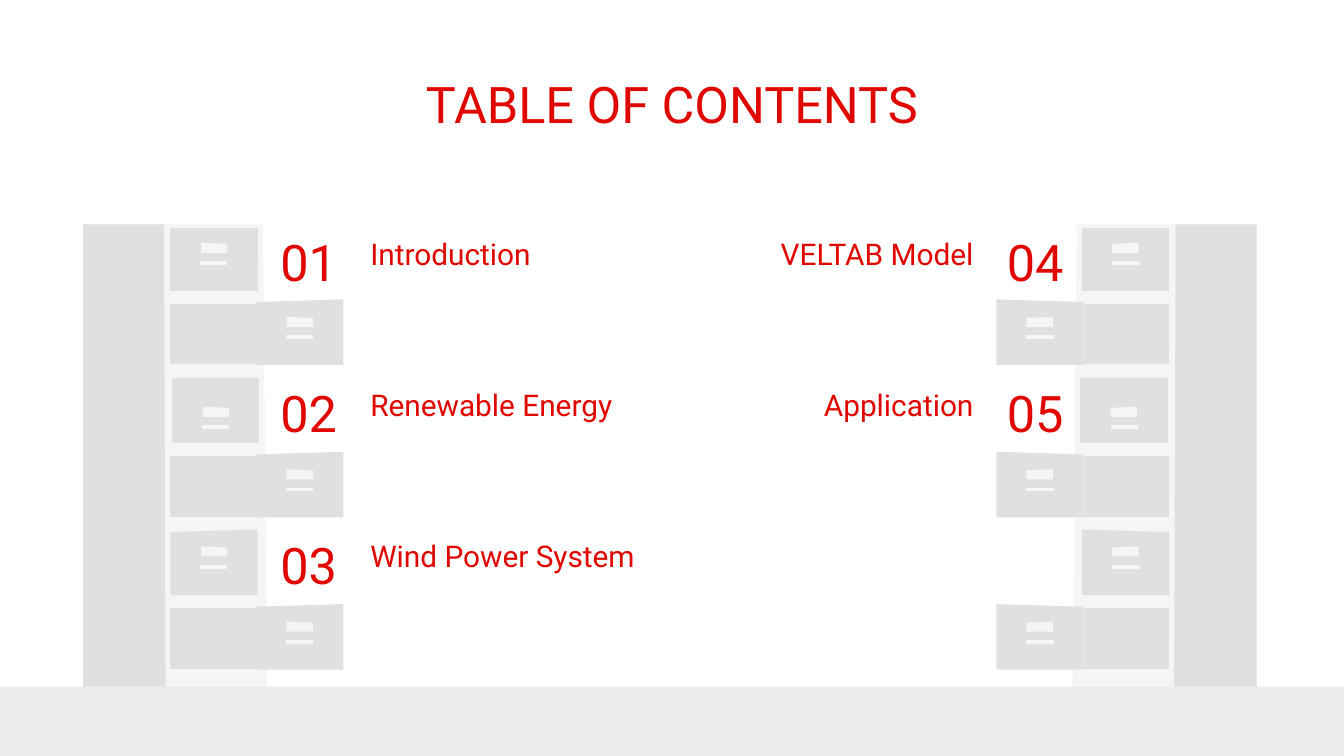
import pptx
import pptx.dml.color
import pptx.enum.shapes
import pptx.enum.text
import pptx.util

Cm = pptx.util.Cm
ALIGN = pptx.enum.text.PP_ALIGN
ANCHOR = pptx.enum.text.MSO_ANCHOR

RED = pptx.dml.color.RGBColor(0xE0, 0x07, 0x00)
PALE = pptx.dml.color.RGBColor(0xF5, 0xF5, 0xF5)
GREY = pptx.dml.color.RGBColor(0xE0, 0xE0, 0xE0)
FLOOR = pptx.dml.color.RGBColor(0xEB, 0xEB, 0xEB)
FONT = "Roboto"

WIDTH, HEIGHT = 25.4, 14.29
GROUND = 12.98
PITCH = 2.88
CASE_W, CASE_H = 4.93, 8.74
FRONT_W = 1.65
NUM_W, TOPIC_W = 1.83, 5.69


def paint(shape, color):
    shape.shadow.inherit = False
    shape.fill.solid()
    shape.fill.fore_color.rgb = color
    shape.line.fill.background()


def write(shape, text, size, align, anchor):
    frame = shape.text_frame
    frame.word_wrap = True
    frame.auto_size = pptx.enum.text.MSO_AUTO_SIZE.NONE
    frame.vertical_anchor = anchor
    frame.margin_left = frame.margin_right = Cm(0.25)
    frame.margin_top = frame.margin_bottom = Cm(0.25)
    frame.text = text
    line = frame.paragraphs[0]
    line.alignment = align
    line.font.size = pptx.util.Pt(size)
    line.font.name = FONT
    line.font.color.rgb = RED


def add_title(slide, left, top, width, height):
    title = slide.shapes.title
    title.left, title.top = Cm(left), Cm(top)
    title.width, title.height = Cm(width), Cm(height)
    write(title, "TABLE OF CONTENTS", 27, ALIGN.CENTER, ANCHOR.MIDDLE)


def add_floor(slide, left, top, width, height):
    kind = pptx.enum.shapes.MSO_SHAPE.RECTANGLE
    floor = slide.shapes.add_shape(
        kind, Cm(left), Cm(top), Cm(width), Cm(height))
    paint(floor, FLOOR)


def add_entry(slide, left, top, number, topic, flip):
    """Place a number beside its topic; flip puts the number on the right."""
    num_x, topic_x = (TOPIC_W, 0) if flip else (0, NUM_W)
    box = slide.shapes.add_textbox(
        Cm(left + topic_x), Cm(top), Cm(TOPIC_W), Cm(1.78))
    write(box, topic, 16, ALIGN.RIGHT if flip else ALIGN.LEFT, ANCHOR.BOTTOM)
    box = slide.shapes.add_textbox(
        Cm(left + num_x), Cm(top + 0.52), Cm(NUM_W), Cm(2.29))
    write(box, number, 27, ALIGN.CENTER, ANCHOR.TOP)


def add_case(slide, left, top, flip):
    """Draw a filing cabinet; flip mirrors it within its box."""
    group = slide.shapes.add_group_shape()

    def outline(points, color):
        spots = [(Cm(left + (CASE_W - x if flip else x)), Cm(top + y))
                 for x, y in points]
        pen = group.shapes.build_freeform(*spots[0])
        pen.add_line_segments(spots[1:], close=True)
        paint(pen.convert_to_shape(), color)

    def panel(x, y, width, height, color, near=0, far=0):
        """Draw a panel whose top corners drop by near and far."""
        outline([(x, y + near), (x, y + height), (x + width, y + height),
                 (x + width, y + far)], color)

    def drawer(x, y, height, tag, slope=0):
        """Draw a drawer front with its label and handle, tag below its top."""
        panel(x, y, FRONT_W, height, GREY, near=slope)
        panel(x + 0.58, y + tag, 0.5, 0.19, PALE, far=0.02)
        panel(x + 0.56, y + tag + 0.35, 0.52, 0.07, PALE)

    outline([(0, 0), (0, CASE_H), (3.48, CASE_H), (3.4, 0)], PALE)
    outline([(0, 0), (0, CASE_H), (1.56, CASE_H), (1.53, 0)], GREY)
    drawer(1.65, 0.08, 1.18, 0.27)
    drawer(1.68, 2.9, 1.24, 0.55)
    drawer(1.65, 5.77, 1.24, 0.32, slope=0.05)
    for row in range(3):
        y = 1.42 + row * PITCH
        drawer(3.27, y, 1.24, 0.33, slope=0.05)
        panel(1.65, y + 0.08, 1.62, 1.15, GREY)


def main():
    deck = pptx.Presentation()
    deck.slide_width, deck.slide_height = Cm(WIDTH), Cm(HEIGHT)
    slide = deck.slides.add_slide(deck.slide_layouts.get_by_name("Title Only"))

    add_floor(slide, 0, GROUND, WIDTH, HEIGHT - GROUND)
    add_title(slide, 2, 1.5, 21.4, 0.9)

    columns = [
        (4.92, False, ["Introduction", "Renewable Energy",
                       "Wind Power System"]),
        (12.96, True, ["VELTAB Model", "Application"]),
    ]
    count = 0
    for left, flip, topics in columns:
        for row, topic in enumerate(topics):
            count += 1
            add_entry(slide, left, 3.6 + row * 2.86, f"{count:02}", topic,
                      flip)

    for left, flip in [(18.82, True), (1.57, False)]:
        add_case(slide, left, GROUND - CASE_H, flip)

    deck.save("out.pptx")


if __name__ == "__main__":
    main()
